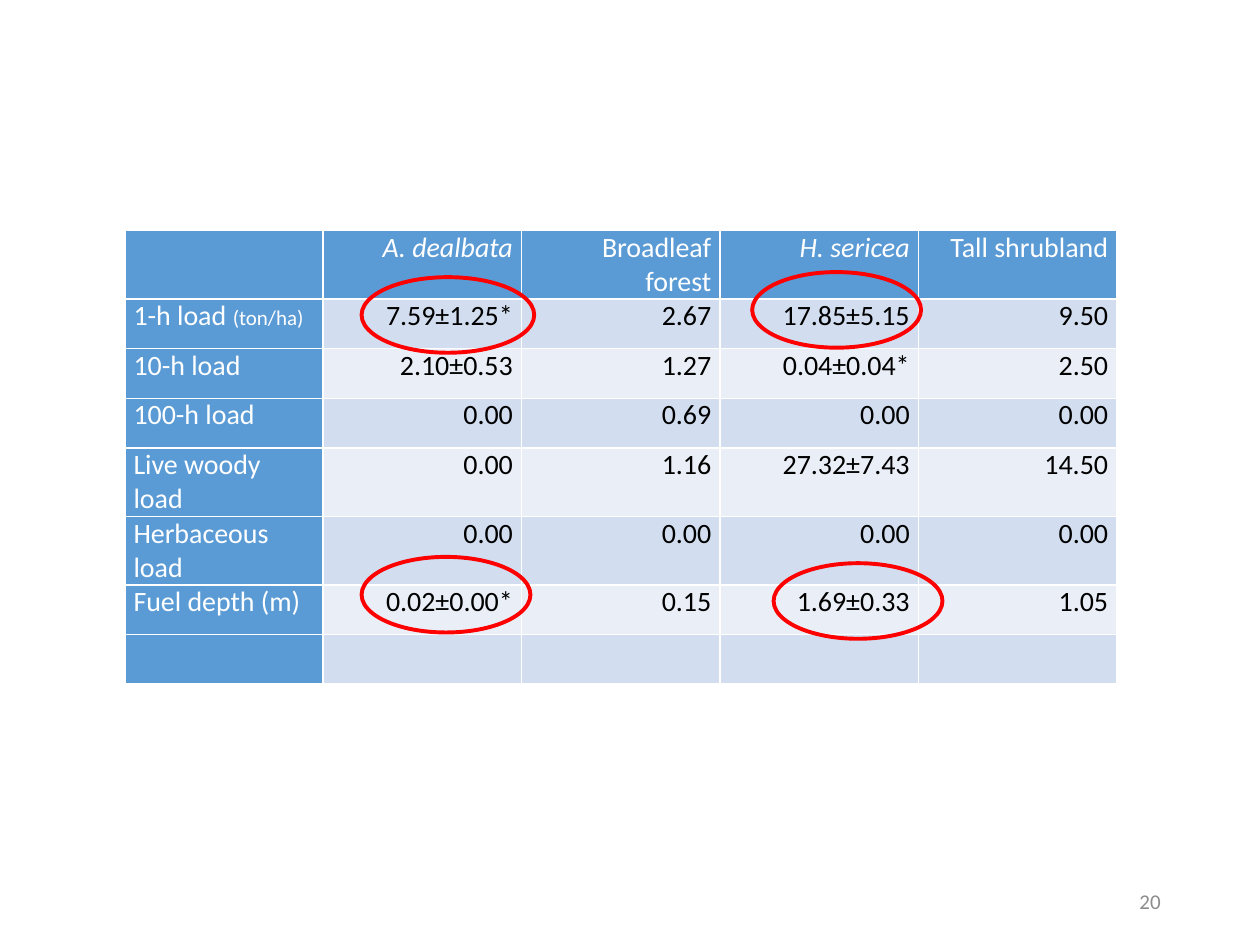
import pptx
import pptx.dml.color
import pptx.enum.shapes
import pptx.enum.text
import pptx.util

Inches, Pt = pptx.util.Inches, pptx.util.Pt
RIGHT = pptx.enum.text.PP_ALIGN.RIGHT


def color(hex_code):
    return pptx.dml.color.RGBColor.from_string(hex_code)


def style_text(paragraph, size, hex_code):
    paragraph.font.name = "Calibri"
    paragraph.font.size = Pt(size)
    paragraph.font.bold = False
    paragraph.font.color.rgb = color(hex_code)


deck = pptx.Presentation()
deck.slide_width, deck.slide_height = Inches(10), Inches(7.5)
slide = deck.slides.add_slide(deck.slide_layouts[6])

# Fuel loads by vegetation type
fuel_rows = [
    ["", "A. dealbata", "Broadleaf forest", "H. sericea", "Tall shrubland"],
    ["1-h load ", "7.59±1.25*", "2.67", "17.85±5.15", "9.50"],
    ["10-h load", "2.10±0.53", "1.27", "0.04±0.04*", "2.50"],
    ["100-h load", "0.00", "0.69", "0.00", "0.00"],
    ["Live woody load", "0.00", "1.16", "27.32±7.43", "14.50"],
    ["Herbaceous load", "0.00", "0.00", "0.00", "0.00"],
    ["Fuel depth (m)", "0.02±0.00*", "0.15", "1.69±0.33", "1.05"],
    [""] * 5,
]
column_width, row_height = 1.575, 0.394
fuel_table = slide.shapes.add_table(
    len(fuel_rows), 5, Inches(0.99), Inches(1.83),
    Inches(5 * column_width), Inches(len(fuel_rows) * row_height)).table
fuel_table.first_col = True
two_line_rows = (0, 4, 5)

for r, values in enumerate(fuel_rows):
    fuel_table.rows[r].height = Inches(0.54 if r in two_line_rows else row_height)
    for c, value in enumerate(values):
        is_heading = r == 0 or c == 0
        band = "D2DEEF" if r % 2 else "EAEFF7"
        cell = fuel_table.cell(r, c)
        cell.fill.solid()
        cell.fill.fore_color.rgb = color("5B9BD5" if is_heading else band)
        cell.margin_left = cell.margin_right = Inches(0.07)
        cell.margin_top = cell.margin_bottom = 0
        entry = cell.text_frame.paragraphs[0]
        if value:
            entry.add_run().text = value
        style_text(entry, 16, "FFFFFF" if is_heading else "000000")
        if c:
            entry.alignment = RIGHT
        if r == 0 and c in (1, 3):
            entry.font.italic = True

# Smaller unit after the first load
unit = fuel_table.cell(1, 0).text_frame.paragraphs[0].add_run()
unit.text = "(ton/ha)"
unit.font.size = Pt(12)

# Rings around the highlighted values
for left, top, width in [(2.87, 2.2, 1.37), (2.87, 4.42, 1.34),
                         (5.97, 2.16, 1.34), (6.14, 4.47, 1.34)]:
    ring = slide.shapes.add_shape(
        pptx.enum.shapes.MSO_SHAPE.OVAL,
        Inches(left), Inches(top), Inches(width), Inches(0.6))
    ring.shadow.inherit = False
    ring.fill.background()
    ring.line.color.rgb = color("FF0000")
    ring.line.width = Pt(2.25)

# Page number
page_number = slide.shapes.add_textbox(
    Inches(7.06), Inches(6.95), Inches(2.25), Inches(0.4)).text_frame
page_number.word_wrap = True
page_number.vertical_anchor = pptx.enum.text.MSO_ANCHOR.MIDDLE
page_number.text = "20"
page_number.paragraphs[0].alignment = RIGHT
style_text(page_number.paragraphs[0], 12, "8C8C8C")

deck.save("out.pptx")
